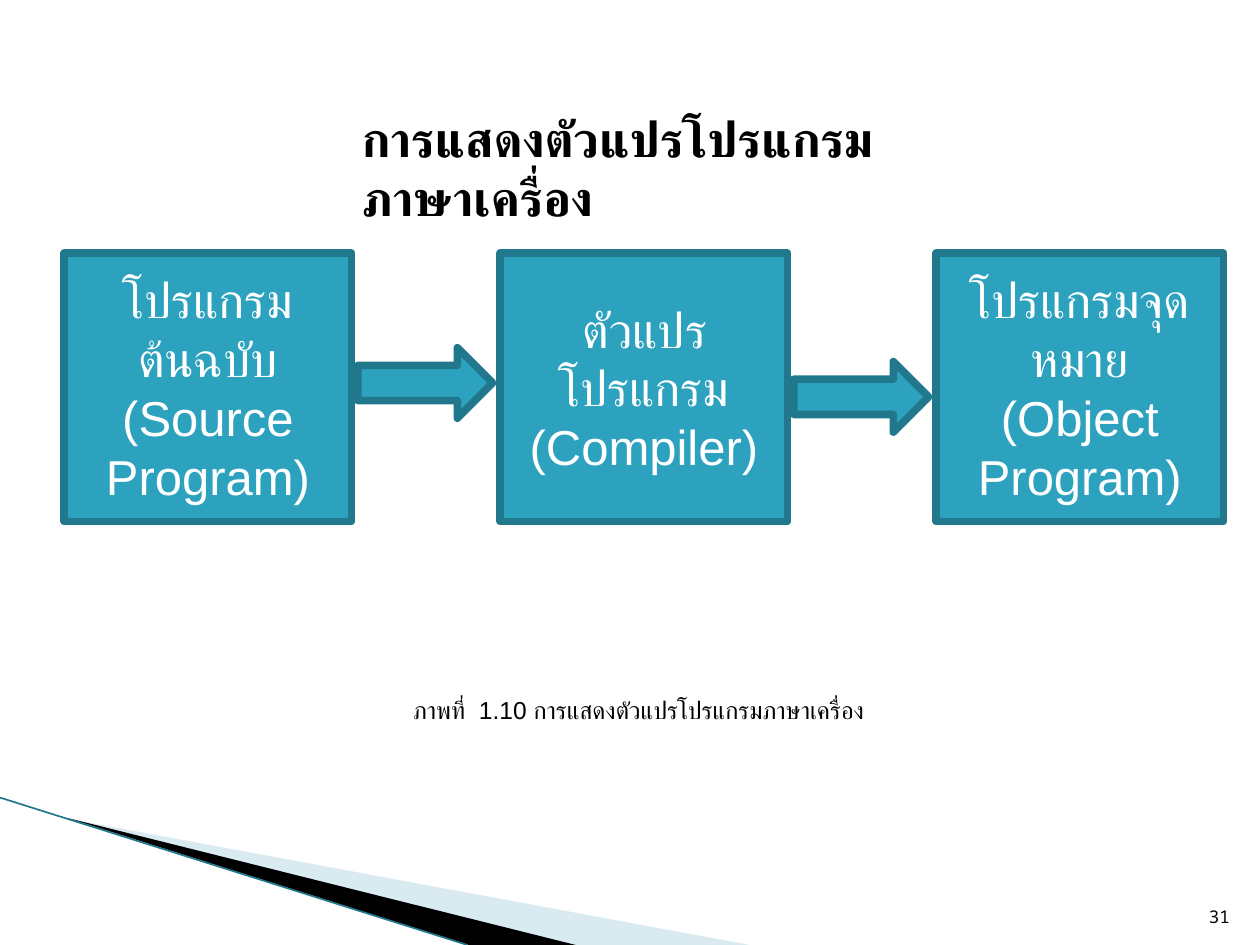
from lxml import etree
from pptx import Presentation, util as u
from pptx.dml.color import RGBColor
from pptx.enum import shapes, text
from pptx.oxml.ns import qn

COLORS = {"teal": "2DA2BF", "edge": "21788D", "pale": "A0CBDC",
          "black": "000000", "white": "FFFFFF"}
LEFT, PITCH = 0.51, 3.46
BOX_W, BOX_H, BOX_TOP = 2.28, 2.13, 2.01
ARROW_W, ARROW_H = 1.07, 0.56
L, C, R = text.PP_ALIGN.LEFT, text.PP_ALIGN.CENTER, text.PP_ALIGN.RIGHT
TOP, MIDDLE, BOTTOM = (text.MSO_ANCHOR.TOP, text.MSO_ANCHOR.MIDDLE,
                       text.MSO_ANCHOR.BOTTOM)


def write(sp, words, size, color, font="Arial", align=L, anchor=TOP, bold=False):
    tf = sp.text_frame
    tf.text = words
    tf.word_wrap, tf.vertical_anchor = True, anchor
    tf.auto_size = text.MSO_AUTO_SIZE.NONE
    for p in tf.paragraphs:
        p.alignment = align
        for r in p.runs:
            for name, value in {"size": u.Pt(size), "bold": bold, "name": font}.items():
                setattr(r.font, name, value)
            r.font.color.rgb = RGBColor.from_string(COLORS[color])
            etree.SubElement(r.font._element, qn("a:cs"), typeface=font)


def paint(sp, fill, line_width=0):
    sp.shadow.inherit = False
    sp.fill.solid()
    sp.fill.fore_color.rgb = RGBColor.from_string(COLORS[fill])
    if line_width:
        sp.line.width = u.Pt(line_width)
        sp.line.color.rgb = RGBColor.from_string(COLORS["edge"])
    else:
        sp.line.fill.background()


prs = Presentation()
prs.slide_width, prs.slide_height = u.Inches(10), u.Inches(7.5)
s = prs.slides.add_slide(prs.slide_layouts[5])

# Corner decoration
wedges = [("pale", [(0.55, 6.5), (5.95, 7.5), (4.56, 7.5)]),
          ("black", [(0.53, 6.49), (4.57, 7.5), (3.72, 7.5)])]
for color, points in wedges:
    start, *rest = [(u.Inches(x), u.Inches(y)) for x, y in points]
    builder = s.shapes.build_freeform(*start)
    builder.add_line_segments(rest)
    wedge = builder.convert_to_shape()
    paint(wedge, color)
    if color == "pale":
        fill = wedge._element.spPr.find(qn("a:solidFill"))
        etree.SubElement(fill[0], qn("a:alpha"), val="40000")

edge = s.shapes.add_connector(shapes.MSO_CONNECTOR.STRAIGHT, 0, u.Inches(6.33),
                              u.Inches(3.71), u.Inches(7.5))
edge.line.width = u.Pt(0.95)
edge.line.color.rgb = RGBColor.from_string(COLORS["edge"])
etree.SubElement(edge._element.spPr, qn("a:effectLst"))

# Compilation stages, left to right
stages = ["โปรแกรมต้นฉบับ\v(Source Program)",
          "ตัวแปรโปรแกรม\n(Compiler)",
          "โปรแกรมจุดหมาย\n(Object Program)"]
for i, words in enumerate(stages):
    box = s.shapes.add_shape(shapes.MSO_SHAPE.RECTANGLE, u.Inches(LEFT + i * PITCH),
                             u.Inches(BOX_TOP), u.Inches(BOX_W), u.Inches(BOX_H))
    paint(box, "teal", 4.33)
    write(box, words, 28, "white", align=C, anchor=MIDDLE)

for i, top in enumerate([2.76, 2.87]):
    arrow = s.shapes.add_shape(shapes.MSO_SHAPE.RIGHT_ARROW,
                               u.Inches(LEFT + BOX_W + 0.05 + i * PITCH),
                               u.Inches(top), u.Inches(ARROW_W), u.Inches(ARROW_H))
    paint(arrow, "teal", 4.33)

# Title, caption and page number
title = s.shapes.title
title.left, title.top, title.width, title.height = map(u.Inches, (2.77, 0.81, 4.64, 0.57))
write(title, "การแสดงตัวแปรโปรแกรมภาษาเครื่อง", 28, "black", "Noto Sans Mono", bold=True)

caption = s.shapes.add_textbox(*map(u.Inches, (3.18, 5.47, 4.39, 0.34)))
write(caption, "ภาพที่  1.10 การแสดงตัวแปรโปรแกรมภาษาเครื่อง", 14, "black")

number = s.shapes.add_textbox(*map(u.Inches, (9.46, 7.01, 0.4, 0.4)))
write(number, "31", 10, "black", "Noto Sans Mono", R, BOTTOM)

prs.save("out.pptx")
